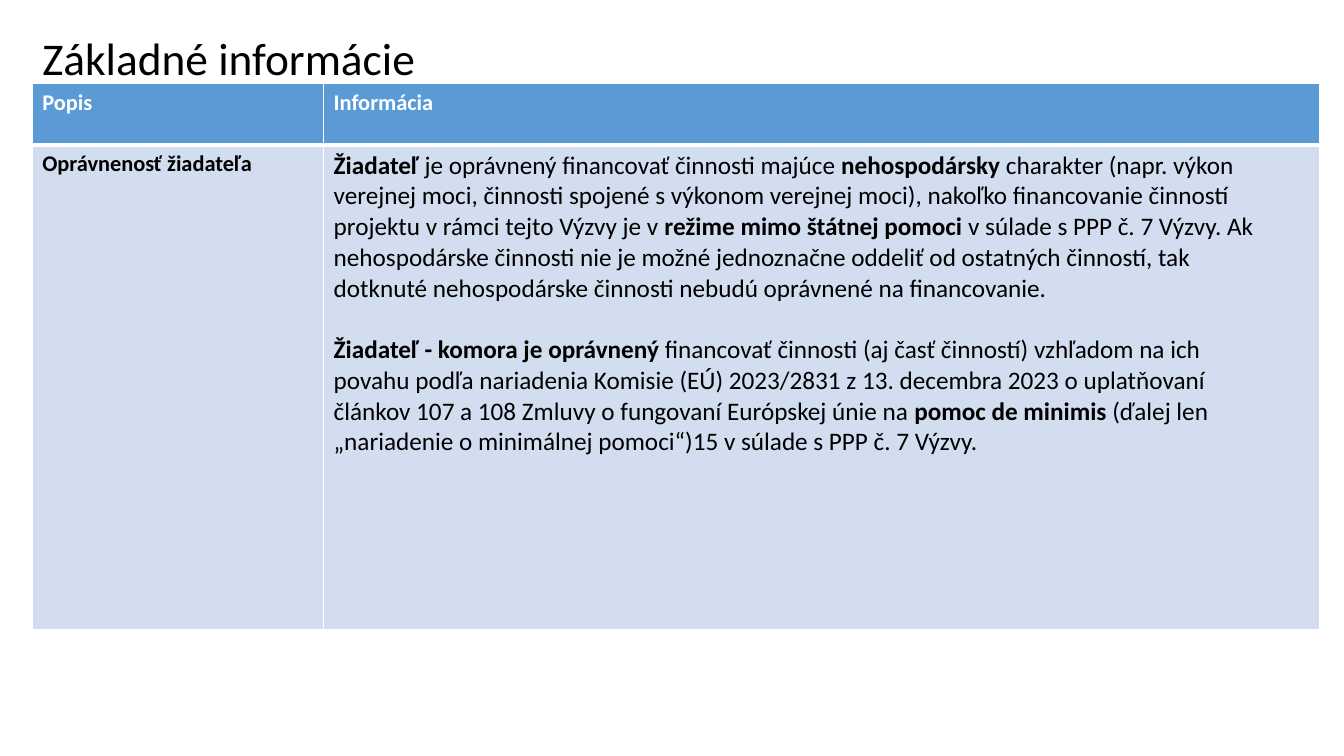
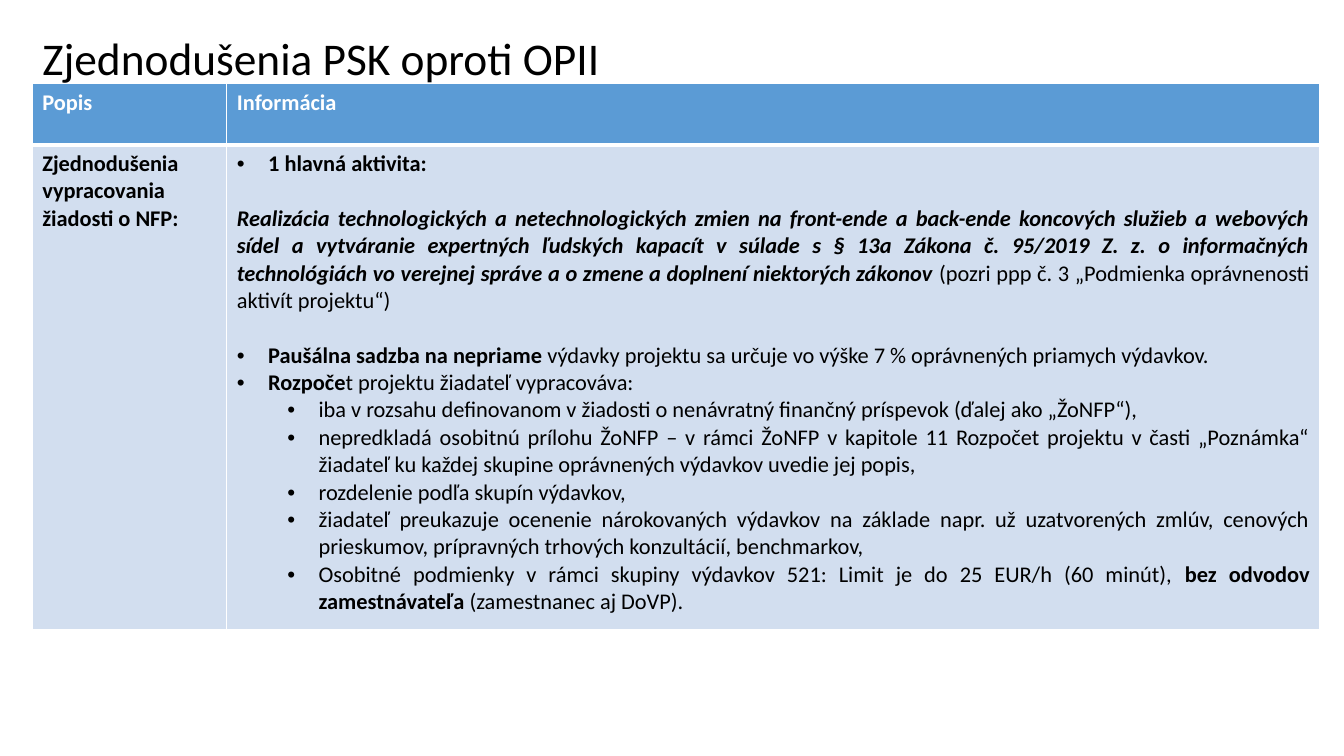
import pptx
import pptx.dml.color
import pptx.enum.text
import pptx.oxml.ns
import pptx.util
from lxml import etree

Inches = pptx.util.Inches
Pt = pptx.util.Pt
qn = pptx.oxml.ns.qn
ALIGN = pptx.enum.text.PP_ALIGN

FONT = "Calibri"
COLORS = {"header": "5B9BD5", "body": "D2DEEF", "white": "FFFFFF", "black": "000000"}
LEFT, TABLE_TOP, TABLE_WIDTH = 0.32, 0.83, 12.77
ROW_HEIGHTS = (0.61, 4.81)

PLAIN = {"bold": False}
BOLD = {"bold": True}
BOLD_ITALIC = {"bold": True, "italic": True}

# Paragraph kinds: left margin and hanging indent in inches, level
KINDS = {"text": None, "bullet": (0.31, -0.31, 0), "sub": (0.81, -0.31, 1)}

# Each paragraph: kind, number of empty lines above, runs
SLIDES = [
    {
        "title": "Základné informácie",
        "first_col": 2.89,
        "label": "Oprávnenosť žiadateľa",
        "size": 18,
        "align": ALIGN.LEFT,
        "paragraphs": [
            ("text", 0, [
                ("Žiadateľ", BOLD),
                (" je oprávnený financovať činnosti majúce ", PLAIN),
                ("nehospodársky", BOLD),
                (" charakter (napr. výkon\vverejnej moci, činnosti spojené s výkonom verejnej moci), "
                 "nakoľko financovanie činností\vprojektu v rámci tejto Výzvy je v ", PLAIN),
                ("režime mimo štátnej pomoci ", BOLD),
                ("v súlade s PPP č. 7 Výzvy. Ak\vnehospodárske činnosti nie je možné jednoznačne "
                 "oddeliť od ostatných činností, tak\vdotknuté nehospodárske činnosti nebudú "
                 "oprávnené na financovanie.", PLAIN)]),
            ("text", 1, [
                ("Žiadateľ - komora je oprávnený ", BOLD),
                ("financovať činnosti (aj časť činností) vzhľadom na ich\vpovahu podľa nariadenia "
                 "Komisie (EÚ) 2023/2831 z 13. decembra 2023 o uplatňovaní\všlánkov".replace("šl", "čl")
                 + " 107 a 108 Zmluvy o fungovaní Európskej únie na ", PLAIN),
                ("pomoc de minimis ", BOLD),
                ("(ďalej len\v„nariadenie o minimálnej pomoci“)15 v súlade s PPP č. 7 Výzvy.", PLAIN)]),
        ],
    },
    {
        "title": "Zjednodušenia PSK oproti OPII",
        "first_col": 1.93,
        "label": "Zjednodušenia vypracovania žiadosti o NFP:",
        "size": 16,
        "align": ALIGN.JUSTIFY,
        "paragraphs": [
            ("bullet", 0, [("1 hlavná aktivita:", BOLD)]),
            ("text", 1, [
                ("Realizácia technologických a netechnologických zmien na front-ende a back-ende "
                 "koncových služieb a webových sídel a vytváranie expertných ľudských kapacít "
                 "v súlade s § 13a Zákona č. 95/2019 Z. z. o informačných technológiách vo verejnej "
                 "správe a o zmene a doplnení niektorých zákonov ", BOLD_ITALIC),
                ("(pozri ppp č. 3 „Podmienka oprávnenosti aktivít projektu“)", PLAIN)]),
            ("bullet", 1, [
                ("Paušálna sadzba na nepriame ", BOLD),
                ("výdavky projektu sa určuje vo výške 7 % oprávnených priamych výdavkov.", PLAIN)]),
            ("bullet", 0, [("Rozpoče", BOLD), ("t projektu žiadateľ vypracováva:", PLAIN)]),
            ("sub", 0, [("iba v rozsahu definovanom v žiadosti o nenávratný finančný príspevok "
                         "(ďalej ako „ŽoNFP“),", PLAIN)]),
            ("sub", 0, [("nepredkladá osobitnú prílohu ŽoNFP – v rámci ŽoNFP v kapitole 11 Rozpočet "
                         "projektu v časti „Poznámka“ žiadateľ ku každej skupine oprávnených "
                         "výdavkov uvedie jej popis,", PLAIN)]),
            ("sub", 0, [("rozdelenie podľa skupín výdavkov,", PLAIN)]),
            ("sub", 0, [("žiadateľ preukazuje ocenenie nárokovaných výdavkov na základe napr. už "
                         "uzatvorených zmlúv, cenových prieskumov, prípravných trhových "
                         "konzultácií, benchmarkov,", PLAIN)]),
            ("sub", 0, [
                ("Osobitné podmienky v rámci skupiny výdavkov 521: Limit je do 25 EUR/h "
                 "(60 minút), ", PLAIN),
                ("bez odvodov zamestnávateľa", BOLD),
                (" (zamestnanec aj DoVP).", PLAIN)]),
        ],
    },
]


def add_runs(p, runs, size, color):
    """Add formatted runs; a vertical tab in the text is a line break."""
    for text, style in runs:
        for i, line in enumerate(text.split("\v")):
            if i:
                p.add_line_break()
            r = p.add_run()
            r.text = line
            for name, value in {"name": FONT, "size": Pt(size), **style}.items():
                setattr(r.font, name, value)
            r.font.color.rgb = pptx.dml.color.RGBColor.from_string(COLORS[color])


def style_cell(cell, fill, widths):
    """Fill the cell and draw white borders; widths in points by side."""
    cell.fill.solid()
    cell.fill.fore_color.rgb = pptx.dml.color.RGBColor.from_string(COLORS[fill])
    tcPr = cell._tc.get_or_add_tcPr()
    for i, (side, width) in enumerate(widths.items()):
        ln = etree.Element(qn("a:ln" + side), w=str(Pt(width)))
        solid = etree.SubElement(ln, qn("a:solidFill"))
        etree.SubElement(solid, qn("a:srgbClr"), val=COLORS["white"])
        tcPr.insert(i, ln)


prs = pptx.Presentation()
prs.slide_width, prs.slide_height = Inches(13.33), Inches(7.5)

for content in SLIDES:
    s = prs.slides.add_slide(prs.slide_layouts[5])

    title = s.shapes.title
    title.left, title.top, title.width, title.height = map(Inches, (LEFT, 0.32, 10, 0.51))
    tf = title.text_frame
    for name, value in {"word_wrap": True, "auto_size": pptx.enum.text.MSO_AUTO_SIZE.NONE,
                        "vertical_anchor": pptx.enum.text.MSO_ANCHOR.MIDDLE,
                        "margin_top": Inches(0.06), "margin_bottom": 0}.items():
        setattr(tf, name, value)
    p = tf.paragraphs[0]
    p.alignment, p.line_spacing = ALIGN.LEFT, 0.9
    add_runs(p, [(content["title"], PLAIN)], 32.4, "black")

    table = s.shapes.add_table(2, 2, Inches(LEFT), Inches(TABLE_TOP),
                               Inches(TABLE_WIDTH), Inches(sum(ROW_HEIGHTS))).table
    first_col = content["first_col"]
    for column, width in zip(table.columns, (first_col, TABLE_WIDTH - first_col)):
        column.width = Inches(width)
    for row, height in zip(table.rows, ROW_HEIGHTS):
        row.height = Inches(height)

    for col, heading in enumerate(("Popis", "Informácia")):
        style_cell(table.cell(0, col), "header", {"L": 1, "R": 1, "T": 1, "B": 3})
        style_cell(table.cell(1, col), "body", {"L": 1, "R": 1, "T": 3, "B": 1})
        add_runs(table.cell(0, col).text_frame.paragraphs[0], [(heading, BOLD)], 16, "white")
    add_runs(table.cell(1, 0).text_frame.paragraphs[0], [(content["label"], BOLD)], 16, "black")

    tf = table.cell(1, 1).text_frame
    for i, (kind, gap, runs) in enumerate(content["paragraphs"]):
        p = tf.add_paragraph() if i else tf.paragraphs[0]
        p.alignment = content["align"]
        p.space_before = Pt(gap * content["size"] * 1.22)
        add_runs(p, runs, content["size"], "black")
        if KINDS[kind]:
            margin, indent, p.level = KINDS[kind]
            pPr = p._p.get_or_add_pPr()
            pPr.set("marL", str(Inches(margin)))
            pPr.set("indent", str(Inches(indent)))
            etree.SubElement(pPr, qn("a:buFont"), typeface="Arial")
            etree.SubElement(pPr, qn("a:buChar"), char="•")

prs.save("out.pptx")
